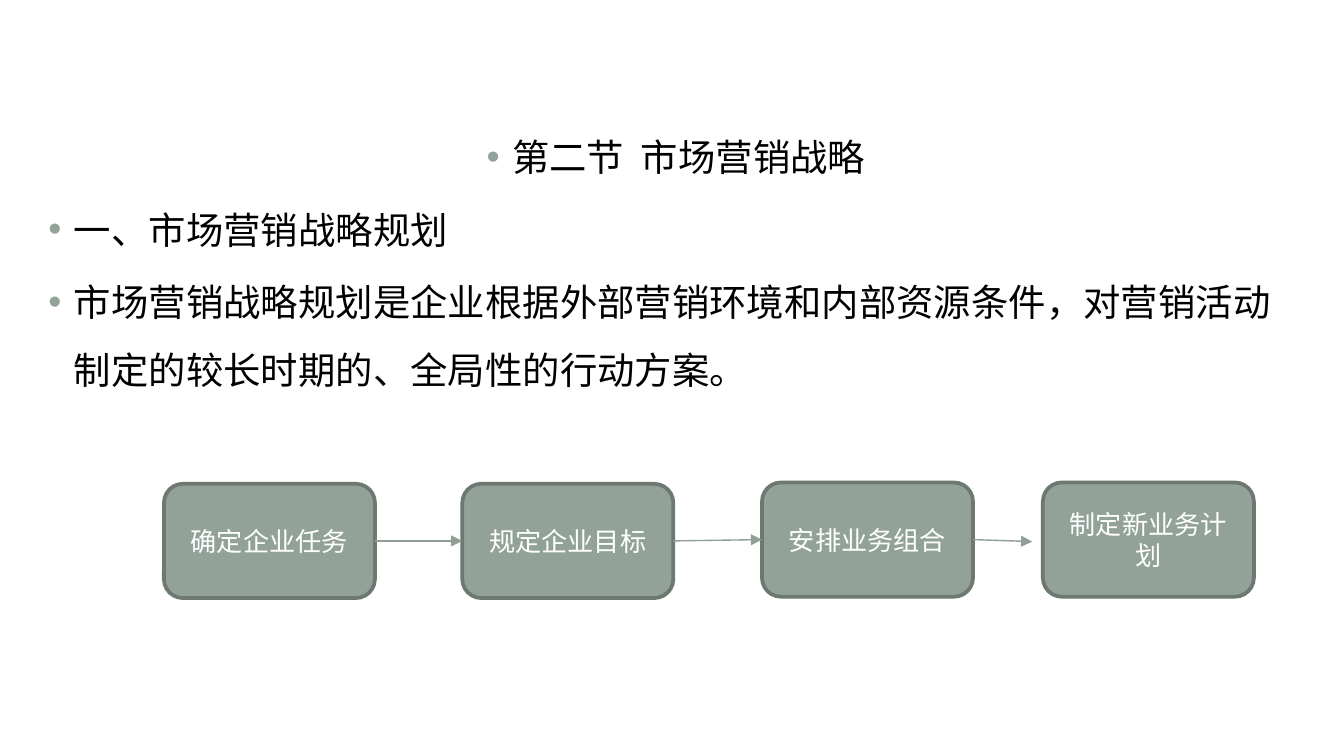
from lxml import etree
from pptx import Presentation
from pptx.dml.color import RGBColor
from pptx.enum.shapes import MSO_CONNECTOR, MSO_SHAPE
from pptx.enum.text import MSO_ANCHOR, MSO_AUTO_SIZE, PP_ALIGN
from pptx.oxml.ns import qn
from pptx.util import Inches, Pt

SAGE = RGBColor(0x93, 0xA2, 0x99)
DARK_SAGE = RGBColor(0x6D, 0x78, 0x71)
ARROW_SAGE = RGBColor(0x8F, 0x9F, 0x96)
BLACK = RGBColor(0, 0, 0)
WHITE = RGBColor(0xFF, 0xFF, 0xFF)

BODY_FONT = "Noto Sans CJK SC"
STEP_FONT = "TeX Gyre Adventor"

OUTLINE = [
    ("第二节  市场营销战略", PP_ALIGN.CENTER),
    ("一、市场营销战略规划", PP_ALIGN.LEFT),
    ("市场营销战略规划是企业根据外部营销环境和内部资源条件，"
     "对营销活动制定的较长时期的、全局性的行动方案。", PP_ALIGN.LEFT),
]
STEPS = [
    ("确定企业任务", 1.22, 3.6),
    ("规定企业目标", 3.44, 3.6),
    ("安排业务组合", 5.67, 3.59),
    ("制定新业务计划", 7.76, 3.59),
]


def add_run(paragraph, text, size, font_name, color):
    """Add a run whose font also applies to East Asian characters."""
    run = paragraph.add_run()
    run.text = text
    run.font.size = Pt(size)
    run.font.name = font_name
    run.font.color.rgb = color
    etree.SubElement(run.font._element, qn("a:ea"), typeface=font_name)


def set_bullet(paragraph, color):
    """Give the paragraph a coloured bullet with a hanging indent."""
    props = paragraph._p.get_or_add_pPr()
    props.set("marL", str(Inches(0.28)))
    props.set("indent", str(Inches(-0.19)))
    bullet_color = etree.SubElement(props, qn("a:buClr"))
    etree.SubElement(bullet_color, qn("a:srgbClr"), val=str(color))
    etree.SubElement(props, qn("a:buFont"), typeface="Arial")
    etree.SubElement(props, qn("a:buChar"), char="•")


def fill_outline(body):
    body.left, body.top = Inches(0.17), Inches(0.78)
    body.width, body.height = Inches(9.63), Inches(4.41)
    frame = body.text_frame
    frame.auto_size = MSO_AUTO_SIZE.NONE
    frame.vertical_anchor = MSO_ANCHOR.TOP
    for index, (text, alignment) in enumerate(OUTLINE):
        paragraph = frame.add_paragraph() if index else frame.paragraphs[0]
        paragraph.alignment = alignment
        paragraph.line_spacing = 1.5
        paragraph.space_before = Pt(3)
        set_bullet(paragraph, SAGE)
        add_run(paragraph, text, 20, BODY_FONT, BLACK)


def add_step(slide, label, left, top):
    step = slide.shapes.add_shape(
        MSO_SHAPE.ROUNDED_RECTANGLE,
        Inches(left), Inches(top), Inches(1.57), Inches(0.85))
    step.shadow.inherit = False
    step.fill.solid()
    step.fill.fore_color.rgb = SAGE
    step.line.color.rgb = DARK_SAGE
    step.line.width = Pt(2)
    step.text_frame.vertical_anchor = MSO_ANCHOR.MIDDLE
    paragraph = step.text_frame.paragraphs[0]
    paragraph.alignment = PP_ALIGN.CENTER
    add_run(paragraph, label, 14, STEP_FONT, WHITE)
    return step


def add_arrow(slide, source, target=None):
    """Draw an arrow to the target step, or a short one that stops free."""
    arrow = slide.shapes.add_connector(
        MSO_CONNECTOR.STRAIGHT, 0, 0, Inches(7.68), Inches(4.03))
    arrow.begin_connect(source, 3)
    if target is not None:
        arrow.end_connect(target, 1)
    arrow.line.color.rgb = ARROW_SAGE
    arrow.line.width = Pt(0.75)
    etree.SubElement(arrow.line._get_or_add_ln(), qn("a:tailEnd"), type="triangle")
    etree.SubElement(arrow._element.spPr, qn("a:effectLst"))


def main():
    prs = Presentation()
    prs.slide_width = Inches(10)
    prs.slide_height = prs.slide_width * 9 // 16
    slide = prs.slides.add_slide(prs.slide_layouts[1])
    title = slide.shapes.title._element
    title.getparent().remove(title)
    fill_outline(slide.placeholders[1])

    task, goal, portfolio, plan = [add_step(slide, *step) for step in STEPS]
    add_arrow(slide, task, goal)
    add_arrow(slide, goal, portfolio)
    add_arrow(slide, portfolio)
    prs.save("out.pptx")


if __name__ == "__main__":
    main()
